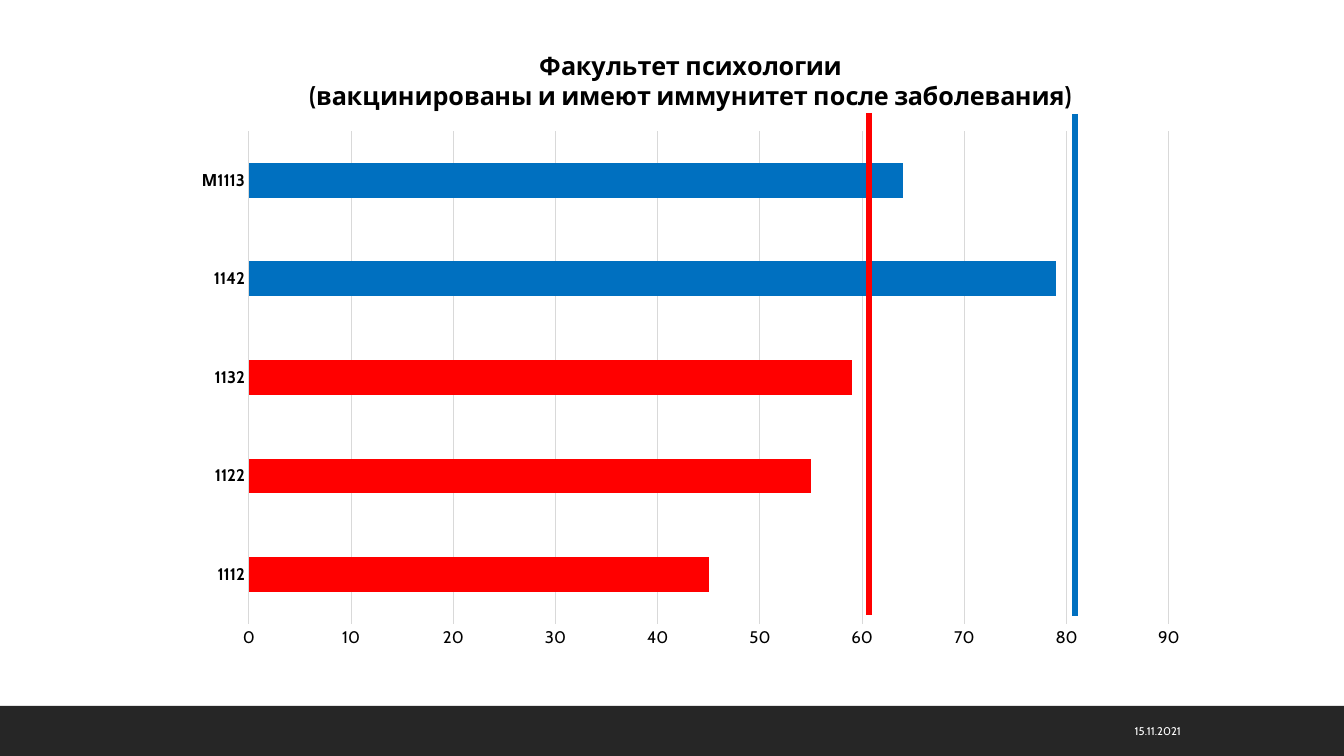
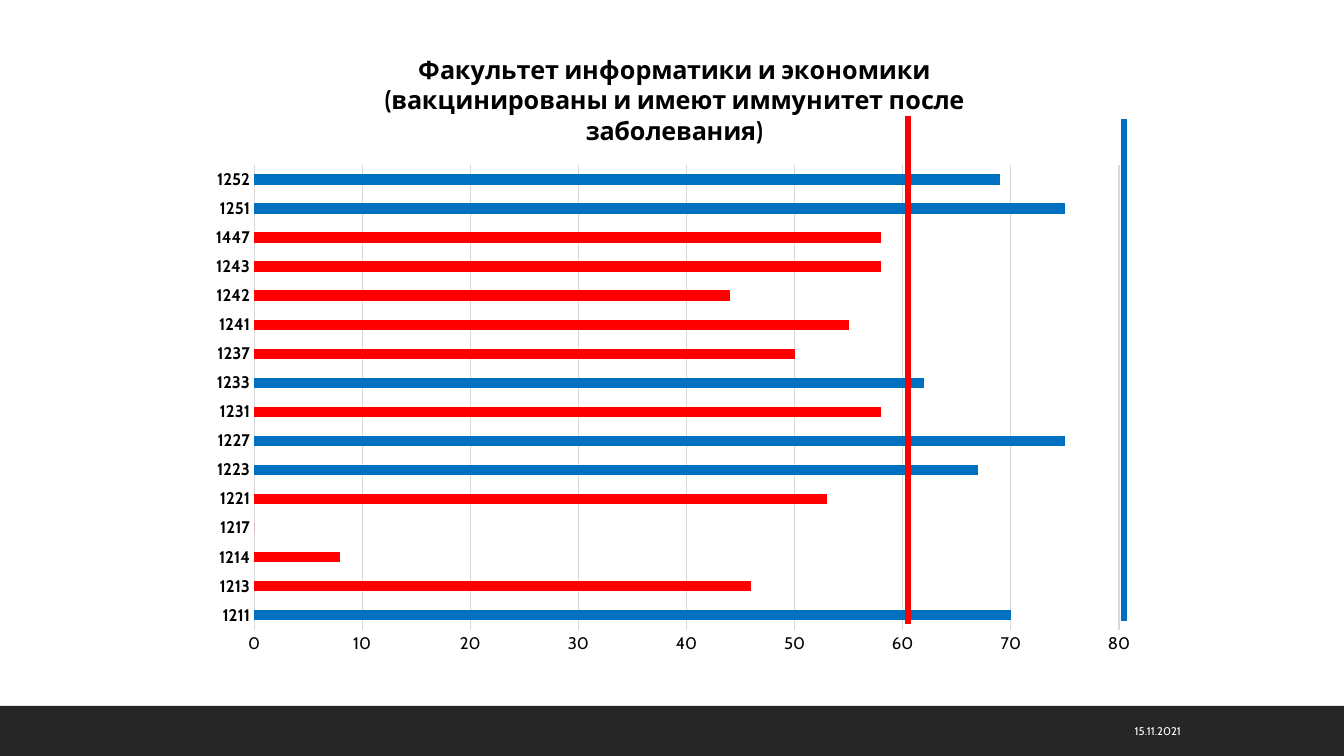
from lxml import etree
from pptx import Presentation
from pptx.chart.data import CategoryChartData
from pptx.dml.color import RGBColor
from pptx.enum.chart import XL_CHART_TYPE, XL_TICK_MARK
from pptx.enum.shapes import MSO_CONNECTOR, MSO_SHAPE
from pptx.enum.text import MSO_ANCHOR, PP_ALIGN
from pptx.oxml.ns import qn
from pptx.util import Pt

BAR_CLUSTERED = XL_CHART_TYPE.BAR_CLUSTERED
NO_TICK = XL_TICK_MARK.NONE
STRAIGHT = MSO_CONNECTOR.STRAIGHT
RECTANGLE = MSO_SHAPE.RECTANGLE
MIDDLE = MSO_ANCHOR.MIDDLE
RIGHT = PP_ALIGN.RIGHT

BLACK = RGBColor(0x00, 0x00, 0x00)
WHITE = RGBColor(0xFF, 0xFF, 0xFF)
BAND = RGBColor(0x26, 0x26, 0x26)
GRID = RGBColor(0xD9, 0xD9, 0xD9)
RED = RGBColor(0xFF, 0x00, 0x00)
BLUE = RGBColor(0x00, 0x70, 0xC0)

FONT = "Cabin"
SLIDE_WIDTH, SLIDE_HEIGHT = 1344, 756
BLANK_LAYOUT = 6
LOWER_GOAL = 60  # bars below this share are red
DATE = "15.11.2021"
SUBTITLE = "(вакцинированы и имеют иммунитет после заболевания)"

# Boxes are left, top, width, height; goals are x, top, bottom, colour
FACULTIES = [
    {
        "title": "Факультет психологии",
        "groups": {"1112": 45, "1122": 55, "1132": 59, "1142": 79, "М1113": 64},
        "axis_max": 90,
        "chart_box": (181, 28, 1019, 632),
        "plot_box": (249, 131, 920, 493),
        "goals": [(869, 113, 615, RED), (1075, 114, 616, BLUE)],
    },
    {
        "title": "Факультет информатики и экономики",
        "groups": {
            "1211": 70, "1213": 46, "1214": 8, "1217": 0,
            "1221": 53, "1223": 67, "1227": 75, "1231": 58,
            "1233": 62, "1237": 50, "1241": 55, "1242": 44,
            "1243": 58, "1447": 58, "1251": 75, "1252": 69,
        },
        "axis_max": 80,
        "chart_box": (198, 32, 953, 635),
        "plot_box": (254, 165, 865, 465),
        "goals": [(908, 116, 624, RED), (1124, 119, 621, BLUE)],
    },
]


def px(length):
    """Turn px into EMU."""
    return round(length * 914400 / 100.8)


def style_font(font, size, color, bold=False):
    font.name = FONT
    font.size = Pt(size)
    font.bold = bold
    font.color.rgb = color


def add_master_band(deck, slide):
    """Draw the bottom band and move it to the master all slides share."""
    band = slide.shapes.add_shape(
        RECTANGLE, 0, px(706), px(SLIDE_WIDTH), px(50))
    band.shadow.inherit = False
    band.fill.solid()
    band.fill.fore_color.rgb = BAND
    band.line.fill.background()
    deck.slide_master.shapes.element.append(band.element)


def add_date(slide):
    box = slide.shapes.add_textbox(px(906), px(711), px(285), px(40))
    frame = box.text_frame
    frame.word_wrap = True
    frame.vertical_anchor = MIDDLE
    frame.text = DATE
    para = frame.paragraphs[0]
    para.alignment = RIGHT
    style_font(para.runs[0].font, 8, WHITE)


def place_plot(chart, chart_box, plot_box):
    """Fix the inner plot area as fractions of the chart's box."""
    left, top, width, height = chart_box
    plot_left, plot_top, plot_width, plot_height = plot_box
    settings = {
        "layoutTarget": "inner",
        "xMode": "edge",
        "yMode": "edge",
        "x": round((plot_left - left) / width, 4),
        "y": round((plot_top - top) / height, 4),
        "w": round(plot_width / width, 4),
        "h": round(plot_height / height, 4),
    }
    plot_area = chart.element.find(".//" + qn("c:plotArea"))
    for old_layout in plot_area.findall(qn("c:layout")):
        plot_area.remove(old_layout)
    layout = etree.Element(qn("c:layout"))
    manual = etree.SubElement(layout, qn("c:manualLayout"))
    for name, value in settings.items():
        etree.SubElement(manual, qn("c:" + name)).set("val", str(value))
    plot_area.insert(0, layout)


def style_axes(chart, axis_max):
    categories, values = chart.category_axis, chart.value_axis
    for axis in (categories, values):
        axis.major_tick_mark = NO_TICK
        axis.minor_tick_mark = NO_TICK
        style_font(axis.tick_labels.font, 12, BLACK, axis is categories)
    values.minimum_scale = 0
    values.maximum_scale = axis_max
    values.major_unit = 10
    values.has_major_gridlines = True
    values.format.line.fill.background()
    for line in (categories.format.line, values.major_gridlines.format.line):
        line.color.rgb = GRID
        line.width = Pt(0.75)


def add_bar_chart(slide, faculty):
    groups = faculty["groups"]
    data = CategoryChartData()
    data.categories = list(groups)
    data.add_series("Series 1", list(groups.values()))
    frame = slide.shapes.add_chart(
        BAR_CLUSTERED, *map(px, faculty["chart_box"]), data)
    chart = frame.chart
    style_font(chart.font, 10, BLACK)
    chart.has_legend = False

    # Title
    chart.has_title = True
    title = chart.chart_title.text_frame
    title.text = faculty["title"] + "\n" + SUBTITLE
    for para in title.paragraphs:
        style_font(para.runs[0].font, 18, BLACK, bold=True)

    # Bars
    plot = chart.plots[0]
    plot.gap_width = 182
    plot.vary_by_categories = False
    series = plot.series[0]
    for index, value in enumerate(groups.values()):
        fill = series.points[index].format.fill
        fill.solid()
        fill.fore_color.rgb = RED if value < LOWER_GOAL else BLUE

    style_axes(chart, faculty["axis_max"])
    place_plot(chart, faculty["chart_box"], faculty["plot_box"])


def add_goal_line(slide, x, top, bottom, color):
    goal = slide.shapes.add_connector(STRAIGHT, px(x), px(top), px(x), px(bottom))
    goal.line.color.rgb = color
    goal.line.width = Pt(4.5)
    properties = goal.element.find(qn("p:spPr"))
    etree.SubElement(properties, qn("a:effectLst"))


def add_faculty_slide(deck, faculty):
    slide = deck.slides.add_slide(deck.slide_layouts[BLANK_LAYOUT])
    add_date(slide)
    add_bar_chart(slide, faculty)
    for goal in faculty["goals"]:
        add_goal_line(slide, *goal)
    return slide


def main():
    deck = Presentation()
    deck.slide_width = px(SLIDE_WIDTH)
    deck.slide_height = px(SLIDE_HEIGHT)
    slides = [add_faculty_slide(deck, faculty) for faculty in FACULTIES]
    add_master_band(deck, slides[0])
    deck.save("out.pptx")


if __name__ == "__main__":
    main()
